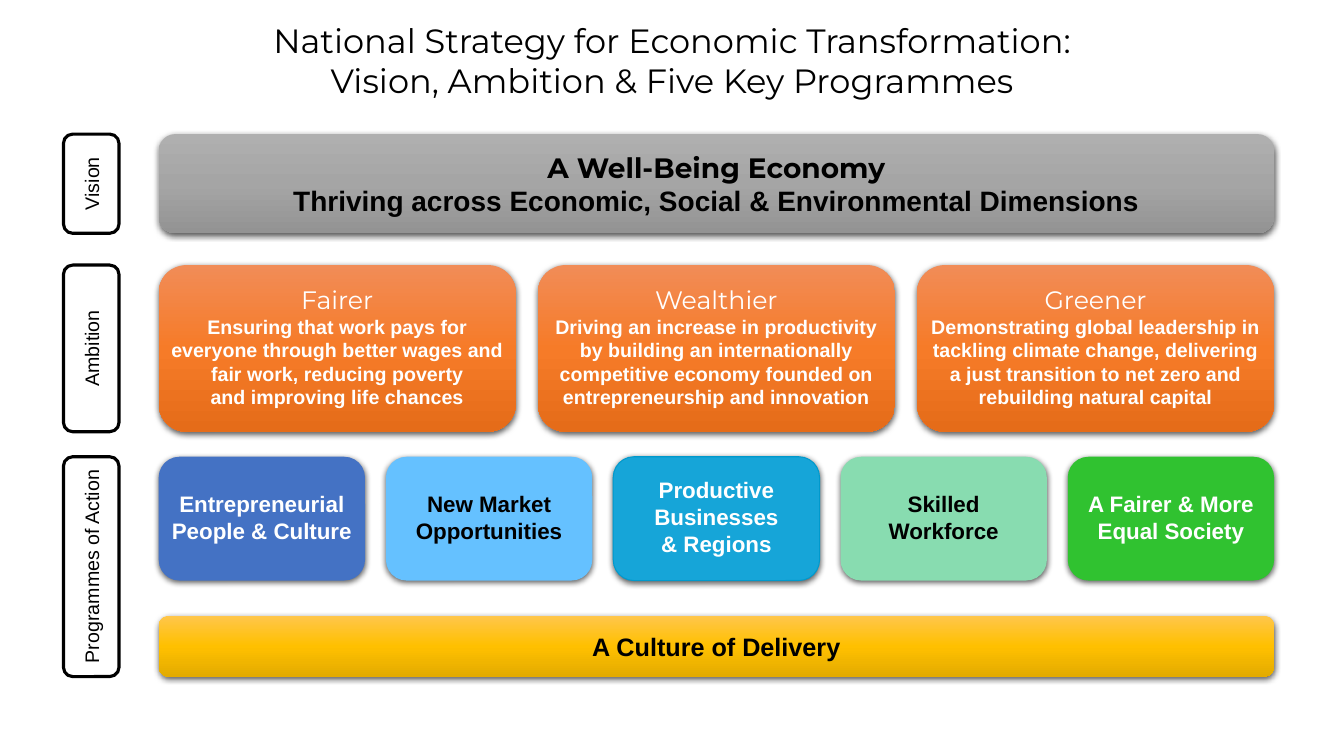
from lxml import etree
from pptx import Presentation
from pptx.dml.color import RGBColor
from pptx.enum.shapes import MSO_SHAPE
from pptx.enum.text import MSO_ANCHOR, PP_ALIGN
from pptx.oxml.ns import qn
from pptx.util import Cm, Pt

ROUNDED = MSO_SHAPE.ROUNDED_RECTANGLE
MIDDLE = MSO_ANCHOR.MIDDLE
CENTER = PP_ALIGN.CENTER

BLACK, WHITE = "000000", "FFFFFF"
GREY = ("AFAFAF", "A5A5A5", "939393")
ORANGE = ("F18C57", "F67B28", "E56C19")
GOLD = ("FFC64B", "FFC000", "E3AB00")
SANS, DISPLAY = "Arial", "Montserrat"

SLIDE_W, SLIDE_H = 33.87, 19.05
LEFT, WIDTH = 4.0, 28.11
LABEL_LEFT, LABEL_W = 1.6, 1.4
BAR_MARGINS = (0.25, 0.13, 0.25, 0.13)
CARD_MARGINS = (0.1, 0.1, 0.1, 0.2)

# (top, height)
VISION = (3.38, 2.5)
AMBITION = (6.68, 4.2)
PROGRAMMES = (11.51, 3.12)
DELIVERY = (15.52, 1.53)

AMBITIONS = [
    ("Fairer", ["Ensuring that work pays for everyone through better wages "
                "and fair work, reducing poverty",
                "and improving life chances"]),
    ("Wealthier", ["Driving an increase in productivity by building an "
                   "internationally competitive economy founded on "
                   "entrepreneurship and innovation"]),
    ("Greener", ["Demonstrating global leadership in tackling climate change, "
                 "delivering a just transition to net zero and rebuilding "
                 "natural capital"]),
]

# (lines, fill, text colour, outline)
ACTIONS = [
    (["Entrepreneurial People & Culture"], "4472C4", WHITE, None),
    (["New Market", "Opportunities"], "65C1FF", BLACK, None),
    (["Productive Businesses", "& Regions"], "16A5D8", WHITE, "0099CC"),
    (["Skilled Workforce"], "88DCB0", BLACK, None),
    (["A Fairer & More Equal Society"], "30C230", WHITE, None),
]


def rgb(color):
    return RGBColor.from_string(color)


def write(sp, lines, color, margins):
    """Fill a shape with centred lines of (text, size, font, bold)."""
    tf = sp.text_frame
    tf.word_wrap = True
    tf.vertical_anchor = MIDDLE
    (tf.margin_left, tf.margin_top,
     tf.margin_right, tf.margin_bottom) = map(Cm, margins)
    for i, (text, size, font, bold) in enumerate(lines):
        p = tf.paragraphs[0] if i == 0 else tf.add_paragraph()
        p.alignment = CENTER
        r = p.add_run()
        r.text = text
        r.font.size = Pt(size)
        r.font.name = font
        r.font.bold = bold
        r.font.color.rgb = rgb(color)


def paint(sp, fill):
    """Fill with one colour, or with a tuple of colours from top to bottom."""
    if isinstance(fill, str):
        sp.fill.solid()
        sp.fill.fore_color.rgb = rgb(fill)
        return
    sp.fill.gradient()
    sp.fill.gradient_angle = 270
    stops = sp.element.spPr.find(".//" + qn("a:gsLst"))
    for gs in list(stops):
        stops.remove(gs)
    for i, color in enumerate(fill):
        pos = i * 100000 // (len(fill) - 1)
        gs = etree.SubElement(stops, qn("a:gs"), pos=str(pos))
        etree.SubElement(gs, qn("a:srgbClr"), val=color)


def drop_shadow(sp):
    effects = sp.element.spPr.find(qn("a:effectLst"))
    shadow = etree.SubElement(
        effects, qn("a:outerShdw"), blurRad=str(Pt(4.5)), dist=str(Pt(1.5)),
        dir="5400000", algn="ctr", rotWithShape="0")
    clr = etree.SubElement(shadow, qn("a:srgbClr"), val=BLACK)
    etree.SubElement(clr, qn("a:alpha"), val="63000")


def add_box(s, x, row, w, fill, outline=None, weight=0.75):
    top, height = row
    sp = s.shapes.add_shape(ROUNDED, Cm(x), Cm(top), Cm(w), Cm(height))
    paint(sp, fill)
    if outline:
        sp.line.color.rgb = rgb(outline)
        sp.line.width = Pt(weight)
    else:
        sp.line.fill.background()
    sp.shadow.inherit = False
    return sp


def add_card(s, x, row, w, fill, lines, color, margins, outline=None):
    sp = add_box(s, x, row, w, fill, outline)
    drop_shadow(sp)
    write(sp, lines, color, margins)


def add_label(s, row, text):
    sp = add_box(s, LABEL_LEFT, row, LABEL_W, WHITE, BLACK, 2.25)
    write(sp, [(text, 14, SANS, False)], BLACK, (0.1, 0, 0.1, 0))
    sp.text_frame._txBody.bodyPr.set("vert", "vert270")


def add_title(s, lines):
    sp = s.shapes.add_textbox(0, Cm(0.36), Cm(SLIDE_W), Cm(2.29))
    write(sp, [(t, 24, DISPLAY, False) for t in lines], BLACK, BAR_MARGINS)


def columns(count, w):
    """Left edges of equal columns spread across the content width."""
    pitch = (WIDTH - w) / (count - 1)
    return [LEFT + i * pitch for i in range(count)]


def main():
    prs = Presentation()
    prs.slide_width, prs.slide_height = Cm(SLIDE_W), Cm(SLIDE_H)
    s = prs.slides.add_slide(prs.slide_layouts[6])

    add_title(s, ["National Strategy for Economic Transformation:",
                  "Vision, Ambition & Five Key Programmes"])

    add_card(s, LEFT, VISION, WIDTH, GREY, [
        ("A Well-Being Economy", 20, DISPLAY, True),
        ("Thriving across Economic, Social & Environmental Dimensions",
         20, SANS, True)], BLACK, BAR_MARGINS)

    card_w = 9.0
    for x, (name, body) in zip(columns(len(AMBITIONS), card_w), AMBITIONS):
        lines = [(name, 18, DISPLAY, False)]
        lines += [(t, 14, SANS, True) for t in body]
        add_card(s, x, AMBITION, card_w, ORANGE, lines, WHITE, CARD_MARGINS)

    card_w = 5.2
    for x, action in zip(columns(len(ACTIONS), card_w), ACTIONS):
        texts, fill, color, outline = action
        lines = [(t, 16, SANS, True) for t in texts]
        add_card(s, x, PROGRAMMES, card_w, fill, lines, color,
                 CARD_MARGINS, outline)

    add_card(s, LEFT, DELIVERY, WIDTH, GOLD,
             [("A Culture of Delivery", 18, SANS, True)], BLACK, BAR_MARGINS)

    add_label(s, VISION, "Vision")
    add_label(s, AMBITION, "Ambition")
    action_top = PROGRAMMES[0]
    add_label(s, (action_top, sum(DELIVERY) - action_top),
              "Programmes of Action")

    prs.save("out.pptx")


if __name__ == "__main__":
    main()
